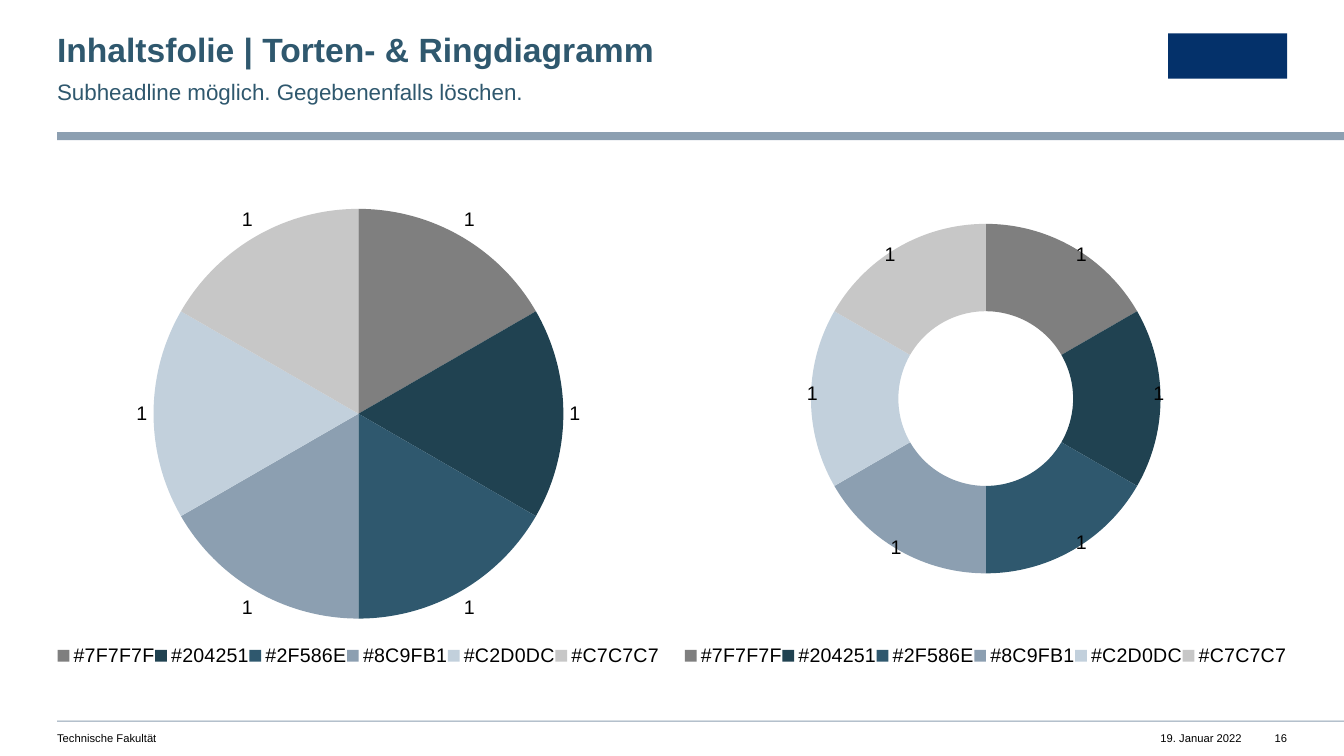
import pptx
import pptx.util
import pptx.dml.color
import pptx.chart.data
import pptx.enum.chart
import pptx.enum.shapes
import pptx.enum.text
import pptx.oxml
import pptx.oxml.ns

COLORS = ["7F7F7F", "204251", "2F586E", "8C9FB1", "C2D0DC", "C7C7C7"]
MARGIN, RIGHT, COLUMN = 4.25, 95.77, 44.85
SECOND = RIGHT - COLUMN
FOOTER = 96.8
PIE_PLOT = {"x": 0.16, "y": 0.05, "w": 0.68, "h": 0.83}
RING_PLOT = {"x": 0.21, "y": 0.08, "w": 0.58, "h": 0.71}
LEGEND = {"x": 0, "y": 0.91, "w": 1, "h": 0.07}
RING_LABEL_SHIFTS = [(0.05, -0.06), (0.07, -0.01), (0.05, 0.06),
                     (-0.04, 0.07), (-0.07, -0.01), (-0.05, -0.06)]


def rgb(value):
    return pptx.dml.color.RGBColor.from_string(value)


def manual_layout(values, inner=False, edge=False):
    namespace = pptx.oxml.ns.nsdecls("c")
    parts = '<c:layoutTarget val="inner"/>' if inner else ""
    if edge:
        parts += '<c:xMode val="edge"/><c:yMode val="edge"/>'
    parts += "".join(f'<c:{key} val="{value}"/>' for key, value in values.items())
    return pptx.oxml.parse_xml(
        f"<c:layout {namespace}><c:manualLayout>{parts}</c:manualLayout></c:layout>")


class SlideBuilder:
    """Holds the style and current slide; places are percentages of the slide size."""

    font = "Arial"
    ink = "000000"
    accent = "2F586E"
    rule = "8C9FB1"
    logo = "04316A"

    def __init__(self, deck):
        self.deck = deck
        self.page = deck.slides.add_slide(deck.slide_layouts[6])

    def place(self, left, top, width, height):
        across, down = self.deck.slide_width / 100, self.deck.slide_height / 100
        return (round(left * across), round(top * down),
                round(width * across), round(height * down))

    def style(self, font, size, color, bold=False):
        font.name, font.size, font.bold = self.font, pptx.util.Pt(size), bold
        font.color.rgb = rgb(color)

    def bar(self, place, color):
        bar = self.page.shapes.add_shape(
            pptx.enum.shapes.MSO_SHAPE.RECTANGLE, *self.place(*place))
        bar.shadow.inherit = False
        bar.fill.solid()
        bar.fill.fore_color.rgb = rgb(color)
        bar.line.fill.background()

    def text(self, place, words, size, color, bold=False, spacing=1.0, right=False):
        box = self.page.shapes.add_textbox(*self.place(*place))
        frame = box.text_frame
        frame.margin_left = frame.margin_right = 0
        frame.margin_top = frame.margin_bottom = 0
        frame.word_wrap = not right
        para = frame.paragraphs[0]
        para.text = words
        para.line_spacing = spacing
        align = pptx.enum.text.PP_ALIGN
        para.alignment = align.RIGHT if right else align.LEFT
        self.style(para.font, size, color, bold)

    def chart(self, place, kind, plot_layout):
        data = pptx.chart.data.CategoryChartData()
        data.categories = [f"#{color}" for color in COLORS]
        data.add_series("Series 1", [1] * len(COLORS))
        chart = self.page.shapes.add_chart(kind, *self.place(*place), data).chart
        self.style(chart.font, 10, self.ink)
        chart.has_title = False
        chart.has_legend = True
        chart.legend.position = pptx.enum.chart.XL_LEGEND_POSITION.BOTTOM
        chart.legend.include_in_layout = False
        self.style(chart.legend.font, 14, self.ink)
        plot = chart.plots[0]
        plot.vary_by_categories = True
        series = plot.series[0]
        for index, color in enumerate(COLORS):
            fill = series.points[index].format.fill
            fill.solid()
            fill.fore_color.rgb = rgb(color)
        labels = series.data_labels
        labels.show_value = True
        self.style(labels.font, 14, self.ink)
        root = chart.element
        for layout in root.xpath(".//c:plotArea/c:layout | .//c:legend/c:layout"):
            layout.getparent().remove(layout)
        area = root.xpath(".//c:plotArea")[0]
        area.insert(0, manual_layout(plot_layout, inner=True, edge=True))
        legend_position = root.xpath(".//c:legend/c:legendPos")[0]
        legend_position.addnext(manual_layout(LEGEND, edge=True))
        return chart

    def pie(self, place):
        chart = self.chart(place, pptx.enum.chart.XL_CHART_TYPE.PIE, PIE_PLOT)
        labels = chart.plots[0].series[0].data_labels
        labels.position = pptx.enum.chart.XL_LABEL_POSITION.OUTSIDE_END

    def ring(self, place):
        chart = self.chart(place, pptx.enum.chart.XL_CHART_TYPE.DOUGHNUT, RING_PLOT)
        root = chart.element
        root.xpath(".//c:holeSize")[0].set("val", "80")
        for point in range(len(COLORS)):
            label = chart.plots[0].series[0].points[point].data_label
            self.style(label.font, 14, self.ink)
        for label, (x, y) in zip(root.xpath(".//c:dLbl"), RING_LABEL_SHIFTS):
            label.insert(1, manual_layout({"x": x, "y": y}))


def main():
    deck = pptx.Presentation()
    deck.slide_width = pptx.util.Inches(13.33)
    deck.slide_height = pptx.util.Inches(7.5)
    slide = SlideBuilder(deck)
    for top, height in [(17.47, 1.07), (95.33, 0.13)]:
        slide.bar((MARGIN, top, 100 - MARGIN, height), slide.rule)
    slide.bar((RIGHT - 8.85, 4.4, 8.85, 6), slide.logo)
    slide.text((MARGIN, 4.4, 56.2, 4.8), "Inhaltsfolie | Torten- & Ringdiagramm",
               24, slide.accent, bold=True, spacing=0.9)
    slide.text((MARGIN, 10, 56.2, 3.6), "Subheadline möglich. Gegebenenfalls löschen.",
               16, slide.accent, spacing=1.1)
    slide.pie((MARGIN, 23.73, COLUMN, 66.67))
    slide.ring((SECOND, 23.73, COLUMN, 66.67))
    slide.text((MARGIN, FOOTER, COLUMN, 1.73), "Technische Fakultät", 8, slide.ink)
    slide.text((85.4, FOOTER, 7, 1.73), "19. Januar 2022", 8, slide.ink, right=True)
    slide.text((94.2, FOOTER, 1.57, 1.73), "16", 8, slide.ink, right=True)
    deck.save("out.pptx")


if __name__ == "__main__":
    main()
